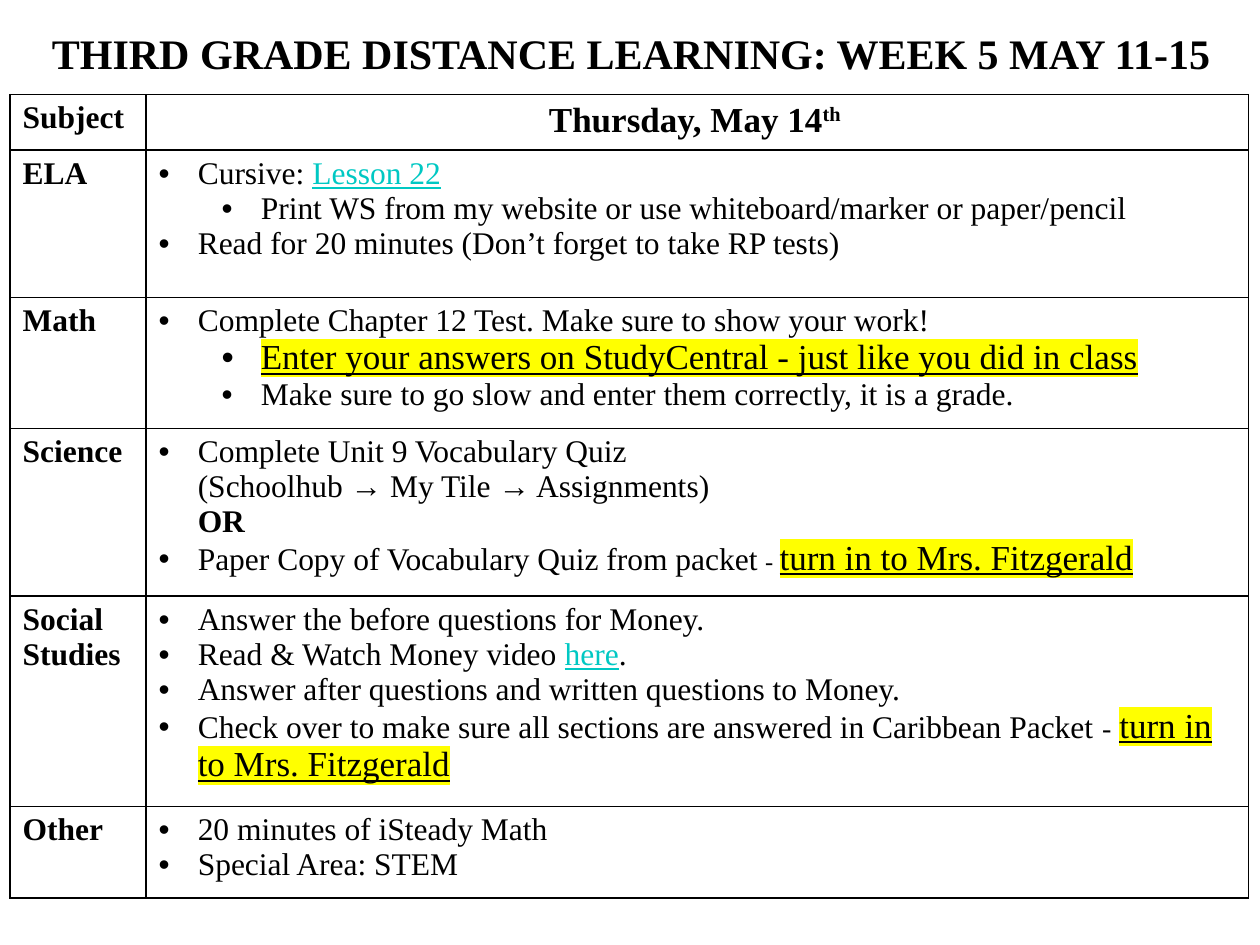
from dataclasses import dataclass
from lxml.etree import SubElement
from pptx import Presentation
from pptx.dml.color import RGBColor
from pptx.enum.text import PP_ALIGN as Align
from pptx.oxml import parse_xml
from pptx.oxml.ns import nsdecls, qn
from pptx.util import Inches, Pt


@dataclass(frozen=True)
class Theme:
    font: str = "Times New Roman"
    ink: str = "000000"
    paper: str = "FFFFFF"
    link: str = "00C8C3"
    marker: str = "FFFF00"
    title: int = 24
    large: int = 20
    body: int = 18
    small: int = 16
    tiny: int = 14
    border: int = 1


THEME = Theme()
STYLES = {
    "plain": {},
    "bold": {"bold": True},
    "title": {"bold": True, "size": THEME.title},
    "date": {"bold": True, "size": THEME.large},
    "ordinal": {"bold": True, "size": THEME.large, "raised": True},
    "link": {"color": THEME.link, "underline": True},
    "marked": {"size": THEME.large, "underline": True, "marked": True},
    "small": {"size": THEME.small},
    "tiny": {"size": THEME.tiny},
}
COLUMNS = (1.08, 8.75)
HEADER_HEIGHT = 0.44
HEADER = ("Subject", [("Thursday, May 14", "date"), ("th ", "ordinal")])
HAND_IN = ("turn in to Mrs. Fitzgerald", "marked")
LESSONS = [
    ("ELA", 1.17, [
        (0, [("Cursive: ", "plain"), ("Lesson 22", "link"), (" ", "plain")]),
        (1, [("Print WS from my website or use whiteboard/marker or paper/pencil", "plain")]),
        (0, [("Read for 20 minutes (Don’t forget to take RP tests)", "plain")]),
    ]),
    ("Math", 1.04, [
        (0, [("Complete Chapter 12 Test. Make sure to show your work!", "plain")]),
        (1, [("Enter your answers on StudyCentral - just like you did in class", "marked")]),
        (1, [("Make sure to go slow and enter them correctly, it is a grade.", "plain")]),
    ]),
    ("Science", 1.33, [
        (0, [("Complete Unit 9 Vocabulary Quiz\n(Schoolhub → My Tile → Assignments)\n", "plain"),
             ("OR", "bold")]),
        (0, [("Paper Copy of Vocabulary Quiz from packet", "plain"), (" ", "small"),
             ("- ", "tiny"), HAND_IN]),
    ]),
    ("Social Studies", 1.67, [
        (0, [("Answer the before questions for Money.", "plain")]),
        (0, [("Read & Watch Money video ", "plain"), ("here", "link"), (".", "plain")]),
        (0, [("Answer after questions and written questions to Money.", "plain")]),
        (0, [("Check over to make sure all sections are answered in Caribbean Packet ", "plain"),
             ("-", "small"), (" ", "plain"), HAND_IN]),
    ]),
    ("Other", 0.73, [
        (0, [("20 minutes of iSteady Math", "plain")]),
        (0, [("Special Area: STEM", "plain")]),
    ]),
]


def format_span(span, size=THEME.body, color=THEME.ink, bold=False,
                underline=False, marked=False, raised=False):
    font = span.font
    font.name, font.size = THEME.font, Pt(size)
    font.bold, font.underline = bold, underline
    font.color.rgb = RGBColor.from_string(color)
    props = font._element
    if marked:
        props.find(qn("a:solidFill")).addnext(parse_xml(
            f'<a:highlight {nsdecls("a")}><a:srgbClr val="{THEME.marker}"/></a:highlight>'))
    if raised:
        props.set("baseline", "30000")


def write_spans(para, spans):
    for text, style in spans:
        for index, line in enumerate(text.split("\n")):
            if index:
                para.add_line_break()
            if line:
                span = para.add_run()
                span.text = line
                format_span(span, **STYLES[style])


def add_bullet(para, level):
    para.level = level
    props = para._p.get_or_add_pPr()
    props.set("marL", str(Inches(0.31 + 0.5 * level)))
    props.set("indent", str(Inches(-0.31)))
    SubElement(props, qn("a:buFont"), typeface="Arial")
    SubElement(props, qn("a:buChar"), char="•")


def style_cell(cell):
    props = cell._tc.get_or_add_tcPr()
    for side in ("lnL", "lnR", "lnT", "lnB"):
        line = SubElement(props, qn(f"a:{side}"), w=str(Pt(THEME.border)))
        fill = SubElement(line, qn("a:solidFill"))
        SubElement(fill, qn("a:srgbClr"), val=THEME.ink)
    cell.fill.solid()
    cell.fill.fore_color.rgb = RGBColor.from_string(THEME.paper)


def add_title(page, left, top, width, height):
    box = page.shapes.add_textbox(left, top, width, height)
    box.text_frame.word_wrap = True
    para = box.text_frame.paragraphs[0]
    para.alignment = Align.CENTER
    write_spans(para, [("THIRD GRADE DISTANCE LEARNING: WEEK 5 MAY 11-15", "title")])


def add_plan(page, left, top, width, height):
    table = page.shapes.add_table(len(LESSONS) + 1, len(COLUMNS),
                                  left, top, width, height).table
    for column, size in zip(table.columns, COLUMNS):
        column.width = Inches(size)
    for cell in table.iter_cells():
        style_cell(cell)

    subject, date = HEADER
    table.rows[0].height = Inches(HEADER_HEIGHT)
    write_spans(table.cell(0, 0).text_frame.paragraphs[0], [(subject, "bold")])
    para = table.cell(0, 1).text_frame.paragraphs[0]
    para.alignment = Align.CENTER
    write_spans(para, date)

    for row, (subject, size, tasks) in enumerate(LESSONS, 1):
        table.rows[row].height = Inches(size)
        write_spans(table.cell(row, 0).text_frame.paragraphs[0], [(subject, "bold")])
        frame = table.cell(row, 1).text_frame
        for index, (level, spans) in enumerate(tasks):
            para = frame.add_paragraph() if index else frame.paragraphs[0]
            add_bullet(para, level)
            write_spans(para, spans)


def main():
    deck = Presentation()
    deck.slide_width, deck.slide_height = Inches(10), Inches(7.5)
    page = deck.slides.add_slide(deck.slide_layouts[6])
    plan_height = HEADER_HEIGHT + sum(size for _, size, _ in LESSONS)
    add_plan(page, Inches(0.08), Inches(0.75), Inches(sum(COLUMNS)), Inches(plan_height))
    add_title(page, Inches(0.01), Inches(0.17), Inches(10), Inches(0.5))
    deck.save("out.pptx")


if __name__ == "__main__":
    main()
